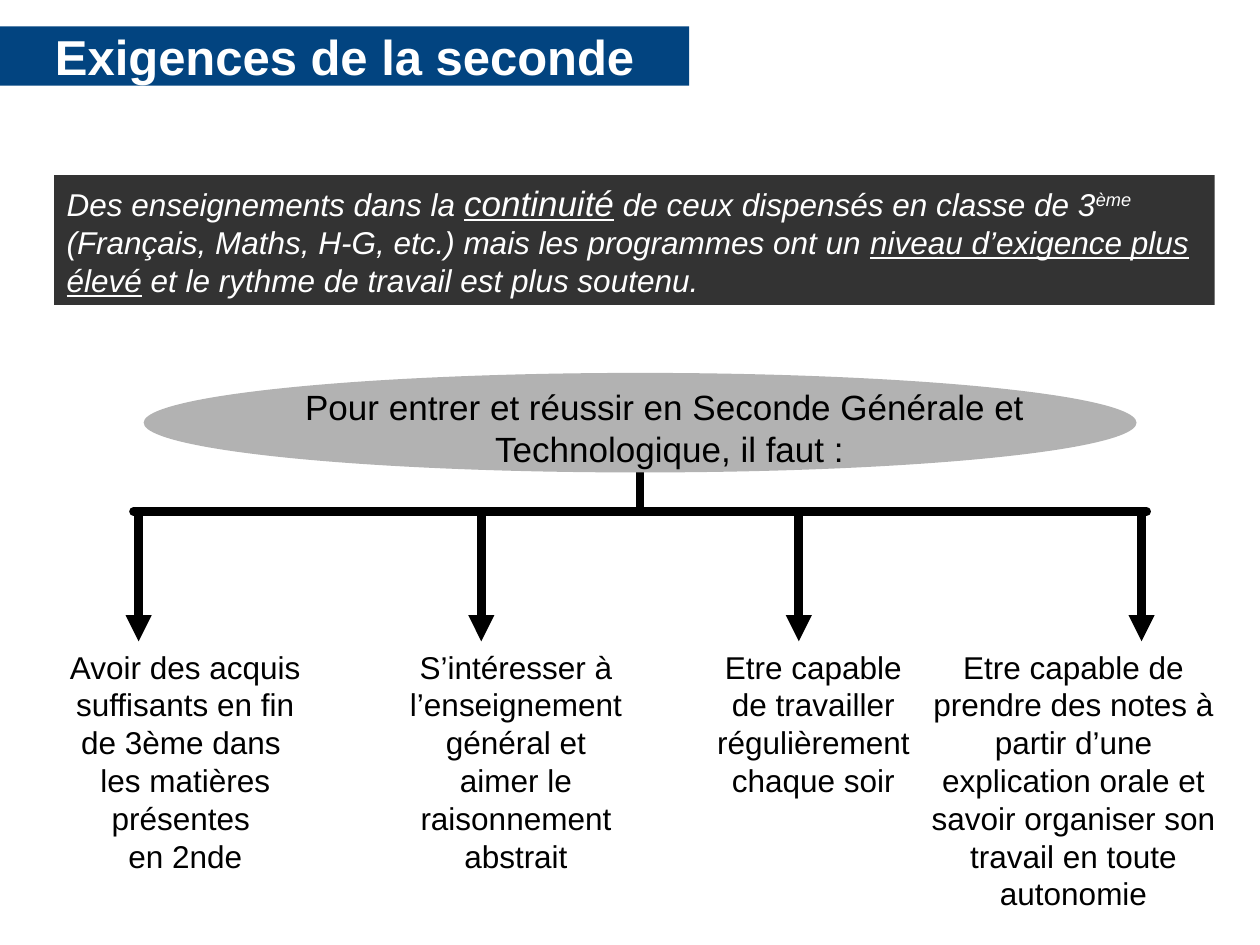
from lxml.etree import SubElement
from pptx import Presentation
from pptx.dml.color import RGBColor
from pptx.enum.shapes import MSO_CONNECTOR, MSO_SHAPE
from pptx.enum.text import MSO_ANCHOR, MSO_AUTO_SIZE, PP_ALIGN
from pptx.oxml.ns import qn
from pptx.util import Inches, Pt

BLUE, DARK, GREY, WHITE, BLACK = "024480", "333333", "B2B2B2", "FFFFFF", "000000"
BRANCH_TOP, BRANCH_BOTTOM = 4.06, 5.09

# Arrow position, text left, width, height and wording of each requirement
REQUIREMENTS = [
    (1.10, 0.35, 2.24, 1.9,
     "Avoir des acquis suffisants en fin de 3ème dans \nles matières présentes \nen 2nde"),
    (3.82, 3.11, 1.97, 1.9,
     "S’intéresser à l’enseignement général et aimer le raisonnement abstrait"),
    (6.34, 5.55, 1.81, 1.3,
     "Etre capable de travailler régulièrement chaque soir"),
    (9.06, 7.28, 2.48, 2.2,
     "Etre capable de prendre des notes à partir d’une explication orale "
     "et savoir organiser son travail en toute autonomie"),
]


def color(value):
    return RGBColor.from_string(value)


def inches(box):
    return [Inches(length) for length in box]


def add_text(para, text, size=18, fill=BLACK, bold=False, italic=False,
             underline=False, raised=False):
    for index, line in enumerate(text.split("\n")):
        if index:
            para.add_line_break()
        span = para.add_run()
        span.text = line
        font = span.font
        font.name, font.size, font.color.rgb = "Arial", Pt(size), color(fill)
        font.bold, font.italic, font.underline = bold, italic, underline
        if raised:
            span._r.get_or_add_rPr().set("baseline", "30000")


def prepare_text(shape, align=PP_ALIGN.CENTER, anchor=MSO_ANCHOR.TOP):
    """Set up the text frame and return its first paragraph."""
    frame = shape.text_frame
    frame.word_wrap = True
    frame.auto_size = MSO_AUTO_SIZE.NONE
    frame.vertical_anchor = anchor
    para = frame.paragraphs[0]
    para.alignment = align
    return para


def add_panel(page, kind, box, fill):
    shape = page.shapes.add_shape(kind, *inches(box))
    shape.shadow.inherit = False
    shape.fill.solid()
    shape.fill.fore_color.rgb = color(fill)
    shape.line.fill.background()
    return shape


def add_line(page, start, end, arrow=False):
    line = page.shapes.add_connector(MSO_CONNECTOR.STRAIGHT, *inches(start + end))
    line.line.width = Pt(5)
    line.line.color.rgb = color(BLACK)
    outline = line.line._get_or_add_ln()
    if arrow:
        SubElement(outline, qn("a:tailEnd"), type="triangle")
    else:
        outline.set("cap", "rnd")
    SubElement(line._element.spPr, qn("a:effectLst"))


def place_title(page, box):
    title = page.shapes.title
    title.left, title.top, title.width, title.height = inches(box)
    title.fill.solid()
    title.fill.fore_color.rgb = color(BLUE)
    para = prepare_text(title, anchor=MSO_ANCHOR.MIDDLE)
    add_text(para, "Exigences de la seconde", size=28, fill=WHITE, bold=True)


def place_summary(page, box):
    panel = add_panel(page, MSO_SHAPE.RECTANGLE, box, DARK)
    para = prepare_text(panel, align=PP_ALIGN.LEFT)
    for text, style in [
        ("Des enseignements dans la ", {}),
        ("continuité", {"size": 20, "underline": True}),
        (" de ceux dispensés en classe de 3", {}),
        ("ème", {"raised": True}),
        (" (Français, Maths, H-G, etc.) mais les programmes ont un ", {}),
        ("niveau d’exigence plus élevé", {"underline": True}),
        (" et le rythme de travail est plus soutenu.", {}),
    ]:
        add_text(para, text, fill=WHITE, italic=True, **style)


def place_heading(page, box):
    left, top, width, height = box
    center, bottom = left + width / 2, top + height
    add_line(page, (center, bottom), (center, BRANCH_TOP))
    add_panel(page, MSO_SHAPE.OVAL, box, GREY)
    # The wording sits slightly right of the ellipse's centre
    label = page.shapes.add_textbox(*inches((left + 0.87, top, 6.61, 0.87)))
    para = prepare_text(label, anchor=MSO_ANCHOR.MIDDLE)
    add_text(para, "Pour entrer et réussir en Seconde Générale et \n"
                   "Technologique, il faut :", size=20)


def place_requirements(page, left, right):
    # Horizontal bar, then one arrow and one text per requirement
    add_line(page, (left, BRANCH_TOP), (right, BRANCH_TOP))
    for arrow_x, text_left, width, height, text in REQUIREMENTS:
        add_line(page, (arrow_x, BRANCH_TOP), (arrow_x, BRANCH_BOTTOM), arrow=True)
        label = page.shapes.add_textbox(*inches((text_left, BRANCH_BOTTOM, width, height)))
        add_text(prepare_text(label), text)


def main():
    deck = Presentation()
    deck.slide_width, deck.slide_height = Inches(10), Inches(7.5)
    page = deck.slides.add_slide(deck.slide_layouts[5])
    place_title(page, (0, 0.21, 5.47, 0.47))
    place_summary(page, (0.43, 1.39, 9.21, 1.03))
    place_heading(page, (1.14, 2.96, 7.88, 0.79))
    place_requirements(page, 1.06, 9.1)
    deck.save("out.pptx")


if __name__ == "__main__":
    main()
